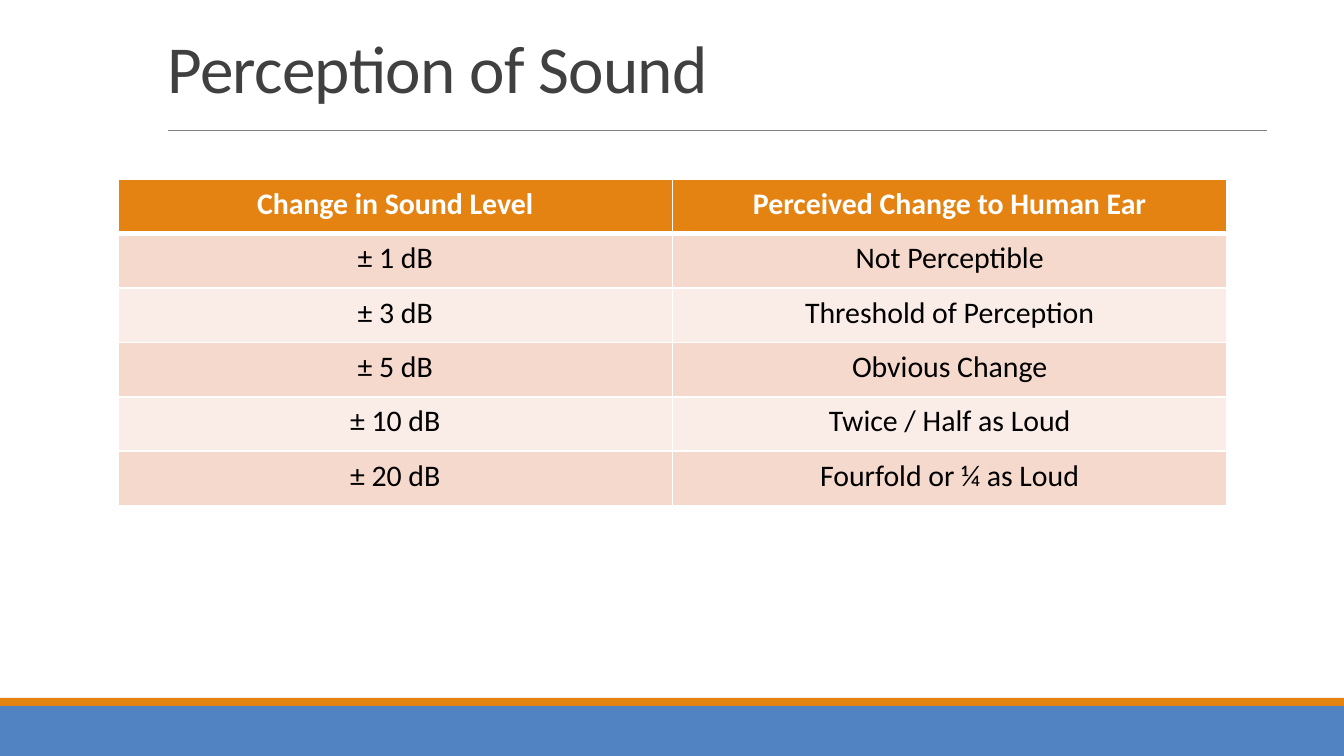
from dataclasses import dataclass

from lxml import etree
from pptx import Presentation
from pptx.dml import color
from pptx.enum import shapes, text
from pptx.oxml import ns
from pptx.util import Pt

PX = 914400 / 134.4
ORANGE, BLUE, WHITE, BLACK = "E48312", "5182C2", "FFFFFF", "000000"
BANDS = ("F5D9CC", "FAEDE7")
ROWS = (
    ("Change in Sound Level", "Perceived Change to Human Ear"),
    ("± 1 dB", "Not Perceptible"),
    ("± 3 dB", "Threshold of Perception"),
    ("± 5 dB", "Obvious Change"),
    ("± 10 dB", "Twice / Half as Loud"),
    ("± 20 dB", "Fourfold or ¼ as Loud"),
)


@dataclass(frozen=True)
class Bar:
    top: int
    height: int
    fill: str


BARS = (Bar(706, 50, BLUE), Bar(698, 8, ORANGE))


def px(n: int) -> int:
    return round(n * PX)


def rgb(value: str) -> color.RGBColor:
    return color.RGBColor.from_string(value)


def add_text(p, content: str, *, size: int, align, fill: str = BLACK,
             bold: bool = False, spacing: int = 0) -> None:
    p.alignment = align
    r = p.add_run()
    r.text = content
    r.font.size = Pt(size)
    r.font.name = "Calibri"
    r.font.bold = bold
    r.font.color.rgb = rgb(fill)
    if spacing:
        r._r.get_or_add_rPr().set("spc", str(spacing))


def add_bar(slide, bar: Bar) -> None:
    sp = slide.shapes.add_shape(shapes.MSO_SHAPE.RECTANGLE, 0, px(bar.top), px(1344), px(bar.height))
    sp.shadow.inherit = False
    sp.fill.solid()
    sp.fill.fore_color.rgb = rgb(bar.fill)
    sp.line.fill.background()


def add_rule(slide) -> None:
    line = slide.shapes.add_connector(shapes.MSO_CONNECTOR.STRAIGHT, px(168), px(131), px(1267), px(131))
    line.line.color.rgb = rgb("808080")
    line.line.width = Pt(0.5)
    etree.SubElement(line._element.spPr, ns.qn("a:effectLst"))


def add_border(cell, side: str, width: int) -> None:
    ln = etree.SubElement(cell._tc.get_or_add_tcPr(), ns.qn(f"a:ln{side}"), w=str(Pt(width)))
    fill = etree.SubElement(ln, ns.qn("a:solidFill"))
    etree.SubElement(fill, ns.qn("a:srgbClr"), val=WHITE)


def add_sound_table(slide) -> None:
    table = slide.shapes.add_table(len(ROWS), 2, px(118), px(179), px(1109), px(327)).table
    for i, row in enumerate(ROWS):
        header = i == 0
        for j, content in enumerate(row):
            cell = table.cell(i, j)
            widths = {"L": 1, "R": 1, "T": 3 if i == 1 else 1, "B": 3 if header else 1}
            for side, width in widths.items():
                add_border(cell, side, width)
            cell.fill.solid()
            cell.fill.fore_color.rgb = rgb(ORANGE if header else BANDS[(i - 1) % 2])
            add_text(cell.text_frame.paragraphs[0], content, size=16, bold=header,
                     fill=WHITE if header else BLACK, align=text.PP_ALIGN.CENTER)


def add_title(slide) -> None:
    sp = slide.shapes.title
    sp.left, sp.top, sp.width, sp.height = map(px, (154, 24, 1077, 97))
    tf = sp.text_frame
    tf.auto_size = text.MSO_AUTO_SIZE.NONE
    tf.vertical_anchor = text.MSO_ANCHOR.MIDDLE
    p = tf.paragraphs[0]
    p.line_spacing = 0.85
    add_text(p, "Perception of Sound", size=36, fill="404040",
             align=text.PP_ALIGN.LEFT, spacing=-40)


def main() -> None:
    prs = Presentation()
    prs.slide_width, prs.slide_height = px(1344), px(756)
    slide = prs.slides.add_slide(prs.slide_layouts[5])
    for bar in BARS:
        add_bar(slide, bar)
    add_rule(slide)
    add_title(slide)
    add_sound_table(slide)
    prs.save("out.pptx")


if __name__ == "__main__":
    main()
